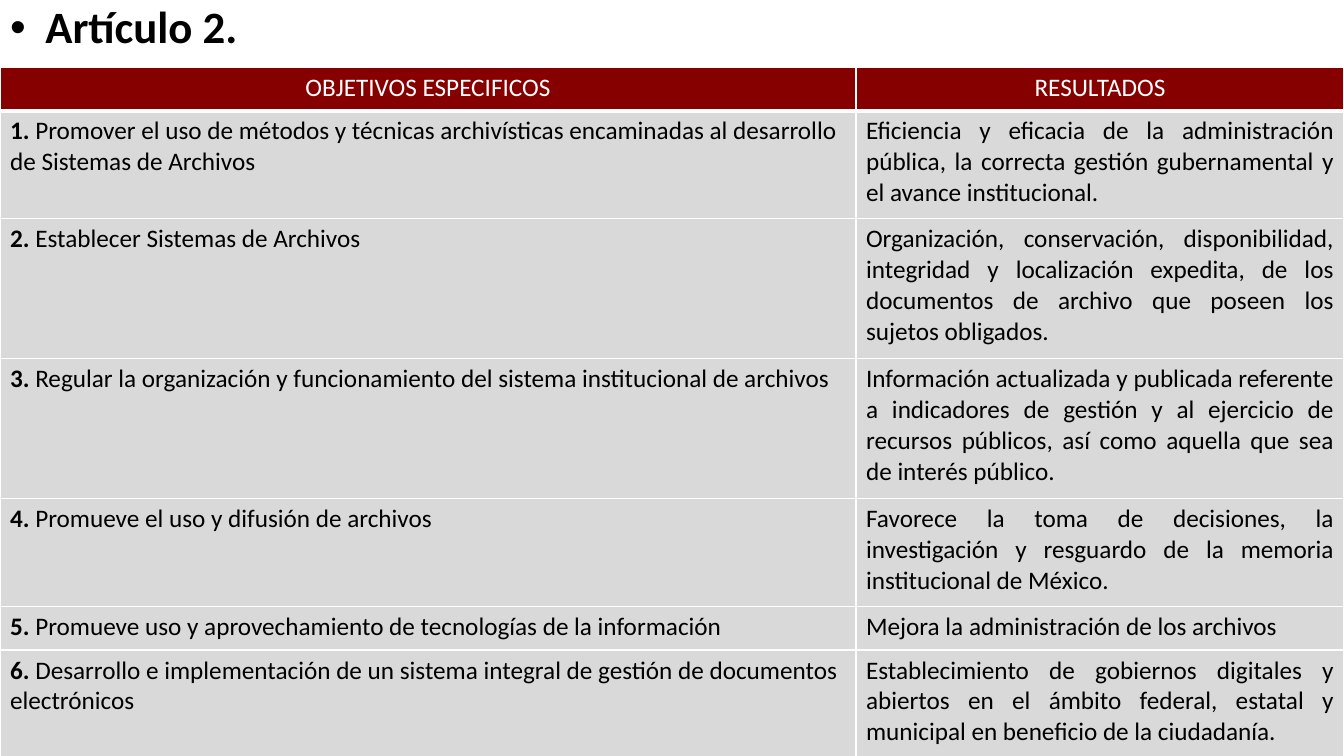
import dataclasses

import lxml.etree
import pptx
import pptx.dml.color
import pptx.enum.text
import pptx.oxml.ns
import pptx.util

Inches = pptx.util.Inches
Align = pptx.enum.text.PP_ALIGN
qn = pptx.oxml.ns.qn

FONT = "Calibri"
BLACK, WHITE, RED, GRAY = "000000", "FFFFFF", "860000", "D9D9D9"


@dataclasses.dataclass
class Goal:
    text: str
    result: str
    height: float
    align: Align = Align.JUSTIFY


HEADS = ("OBJETIVOS ESPECIFICOS", "RESULTADOS")
WIDTHS = (8.49, 4.84)
HEAD_HEIGHT = 0.43
GOALS = [
    Goal("Promover el uso de métodos y técnicas archivísticas encaminadas al "
         "desarrollo de Sistemas de Archivos",
         "Eficiencia y eficacia de la administración pública, la correcta "
         "gestión gubernamental y el avance institucional.", 1.07),
    Goal("Establecer Sistemas de Archivos",
         "Organización, conservación, disponibilidad, integridad y localización "
         "expedita, de los documentos de archivo que poseen los sujetos "
         "obligados.", 1.39),
    Goal("Regular la organización y funcionamiento del sistema institucional "
         "de archivos",
         "Información actualizada y publicada referente a indicadores de "
         "gestión y al ejercicio de recursos públicos, así como aquella que "
         "sea de interés público.", 1.39),
    Goal("Promueve el uso y difusión de archivos",
         "Favorece la toma de decisiones, la investigación y resguardo de la "
         "memoria institucional de México.", 1.07),
    Goal("Promueve uso y aprovechamiento de tecnologías de la información",
         "Mejora la administración de los archivos", 0.43, Align.LEFT),
    Goal("Desarrollo e implementación de un sistema integral de gestión de "
         "documentos electrónicos",
         "Establecimiento de gobiernos digitales y abiertos en el ámbito "
         "federal, estatal y municipal en beneficio de la ciudadanía. ", 1.07),
]


def color(code: str) -> pptx.dml.color.RGBColor:
    return pptx.dml.color.RGBColor.from_string(code)


def add_run(para, text: str, size: float, tint: str, bold: bool = False) -> None:
    run = para.add_run()
    run.text = text
    font = run.font
    font.name, font.size, font.bold = FONT, pptx.util.Pt(size), bold
    font.color.rgb = color(tint)


def add_borders(cell, base: float) -> None:
    """Draw white cell edges, with the bottom one base points wide."""
    props = cell._tc.get_or_add_tcPr()
    edges = (("a:lnL", 1), ("a:lnR", 1), ("a:lnT", 1), ("a:lnB", base))
    for spot, (tag, width) in enumerate(edges):
        line = lxml.etree.Element(qn(tag), w=str(pptx.util.Pt(width)))
        fill = lxml.etree.SubElement(line, qn("a:solidFill"))
        lxml.etree.SubElement(fill, qn("a:srgbClr"), val=WHITE)
        props.insert(spot, line)


def fill_cell(cell, runs: list[tuple[str, bool]], align: Align,
              back: str = GRAY, tint: str = BLACK, base: float = 1) -> None:
    cell.fill.solid()
    cell.fill.fore_color.rgb = color(back)
    add_borders(cell, base)
    para = cell.text_frame.paragraphs[0]
    para.alignment = align
    for text, bold in runs:
        add_run(para, text, 18, tint, bold)


def add_heading(slide) -> None:
    body = slide.placeholders[1]
    body.left, body.top = Inches(0), Inches(0)
    body.width, body.height = Inches(12.49), Inches(0.48)
    frame = body.text_frame
    frame.auto_size = pptx.enum.text.MSO_AUTO_SIZE.NONE
    para = frame.paragraphs[0]
    para.alignment = Align.JUSTIFY
    para.line_spacing = 0.9
    para.space_before = pptx.util.Pt(10)
    props = para._p.get_or_add_pPr()
    props.set("marL", str(Inches(0.25)))
    props.set("indent", str(Inches(-0.25)))
    lxml.etree.SubElement(props, qn("a:buFont"), typeface="Arial")
    lxml.etree.SubElement(props, qn("a:buChar"), char="•")
    add_run(para, " ", 32, BLACK)
    add_run(para, "Artículo 2. ", 32, BLACK, True)


def add_goals(slide) -> None:
    heights = [HEAD_HEIGHT] + [goal.height for goal in GOALS]
    table = slide.shapes.add_table(
        len(heights), len(WIDTHS), Inches(0), Inches(0.67),
        Inches(sum(WIDTHS)), Inches(sum(heights))).table
    for column, width in zip(table.columns, WIDTHS):
        column.width = Inches(width)
    for row, height in zip(table.rows, heights):
        row.height = Inches(height)
    for col, head in enumerate(HEADS):
        fill_cell(table.cell(0, col), [(head, False)], Align.CENTER,
                  RED, WHITE, 3)
    for row, goal in enumerate(GOALS, 1):
        fill_cell(table.cell(row, 0),
                  [(f"{row}. ", True), (goal.text, False)], Align.LEFT)
        fill_cell(table.cell(row, 1), [(goal.result, False)], goal.align)


def main() -> None:
    deck = pptx.Presentation()
    deck.slide_width, deck.slide_height = Inches(13.33), Inches(7.5)
    slide = deck.slides.add_slide(deck.slide_layouts[1])
    title = slide.shapes.title.element
    title.getparent().remove(title)
    add_heading(slide)
    add_goals(slide)
    deck.save("out.pptx")


if __name__ == "__main__":
    main()
